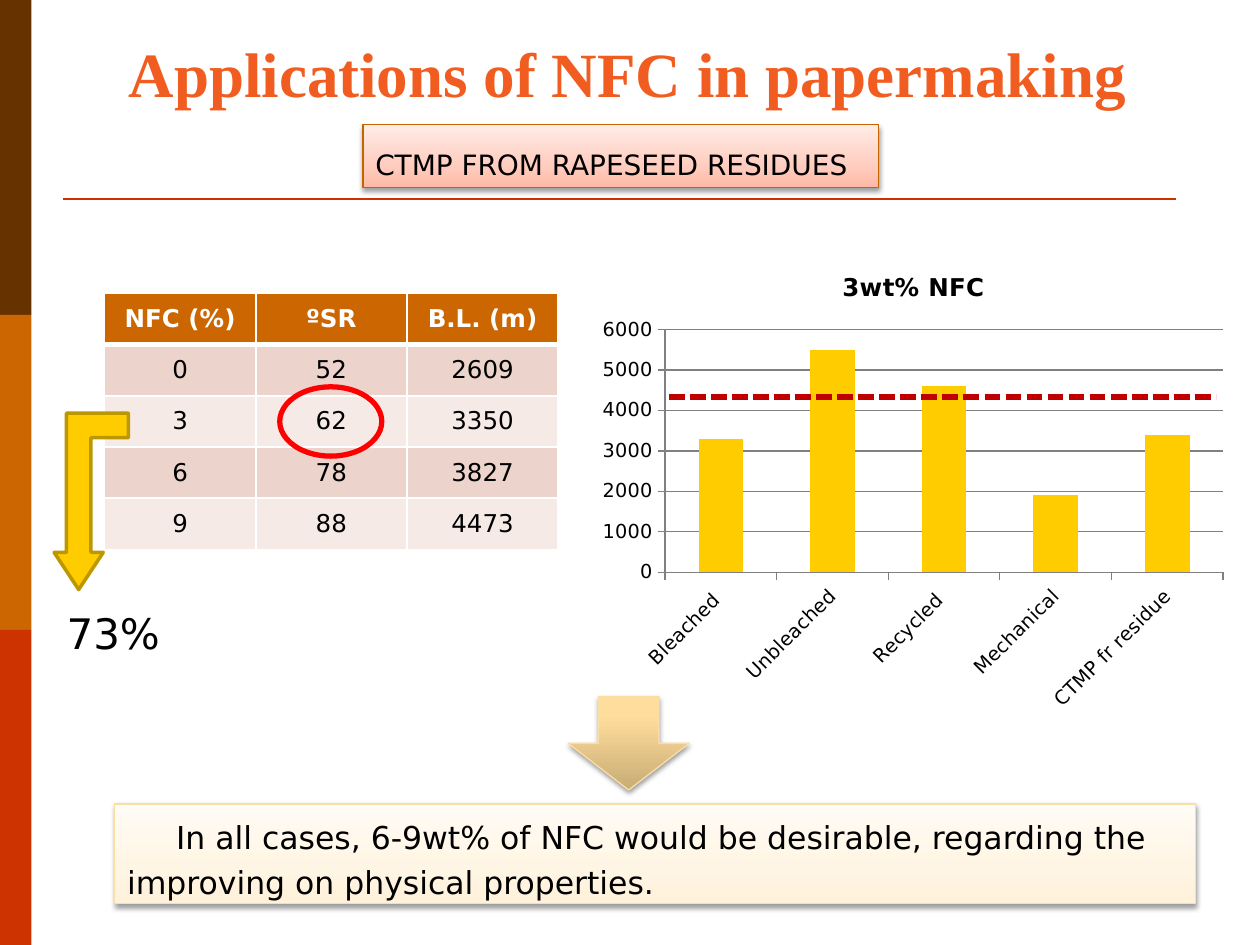
from lxml import etree
from pptx import Presentation
from pptx.chart.data import CategoryChartData
from pptx.dml.color import RGBColor
from pptx.enum.chart import XL_CHART_TYPE, XL_TICK_MARK
from pptx.enum.dml import MSO_LINE
from pptx.enum.shapes import MSO_CONNECTOR, MSO_SHAPE
from pptx.enum.text import MSO_ANCHOR, PP_ALIGN
from pptx.oxml import parse_xml
from pptx.oxml.ns import nsdecls, qn
from pptx.util import Inches, Pt

RECT, ELLIPSE = MSO_SHAPE.RECTANGLE, MSO_SHAPE.OVAL
DOWN_ARROW, BENT_ARROW = MSO_SHAPE.DOWN_ARROW, MSO_SHAPE.BENT_UP_ARROW
LEFT, CENTER = PP_ALIGN.LEFT, PP_ALIGN.CENTER
TOP, MIDDLE, BOTTOM = MSO_ANCHOR.TOP, MSO_ANCHOR.MIDDLE, MSO_ANCHOR.BOTTOM
SANS, SERIF = "DejaVu Sans", "Times New Roman"

BLACK = RGBColor(0x00, 0x00, 0x00)
WHITE = RGBColor(0xFF, 0xFF, 0xFF)
BROWN = RGBColor(0x66, 0x33, 0x00)
OCHRE = RGBColor(0xCC, 0x66, 0x00)
RUST = RGBColor(0xCC, 0x33, 0x00)
ORANGE = RGBColor(0xF1, 0x5D, 0x20)
YELLOW = RGBColor(0xFF, 0xCC, 0x00)
DARK_YELLOW = RGBColor(0xBD, 0x97, 0x00)
SAND = RGBColor(0xFB, 0xDE, 0xA4)
AMBER = RGBColor(0xC8, 0x64, 0x00)
RED = RGBColor(0xFF, 0x00, 0x00)
DARK_RED = RGBColor(0xC0, 0x00, 0x00)
GRAY = RGBColor(0x80, 0x80, 0x80)
BANDS = (RGBColor(0xEC, 0xD3, 0xCC), RGBColor(0xF6, 0xEA, 0xE7))

PINK_FADE = ((0, "FFB9A5"), (35, "FFCDBF"), (100, "FFECE7"))
CREAM_FADE = ((0, "FFF1DA"), (35, "FFF5E4"), (100, "FFFBF5"))
SAND_FADE = ((0, "C8AC75"), (80, "FFDD9D"), (100, "FFDE9F"))

TITLE = "Applications of NFC in papermaking"
SUBTITLE = "CTMP FROM RAPESEED RESIDUES"
INCREASE = "73%"
CONCLUSION = ("In all cases, 6-9wt% of NFC would be desirable, regarding the "
              "improving on physical properties.")
TABLE_ROWS = [
    ("NFC (%)", "ºSR", "B.L. (m)"),
    ("0", "52", "2609"),
    ("3", "62", "3350"),
    ("6", "78", "3827"),
    ("9", "88", "4473"),
]
CHART_TITLE = "3wt% NFC"
BREAKING_LENGTHS = {"Bleached ": 3300, "Unbleached": 5500, "Recycled ": 4600,
                    "Mechanical": 1900, "CTMP fr residue": 3400}


def style_font(font, size, color=BLACK, name=SANS, bold=False):
    font.size, font.name, font.bold = Pt(size), name, bold
    font.color.rgb = color


def write(frame, text, size, color=BLACK, name=SANS, bold=False, align=LEFT, anchor=TOP):
    frame.word_wrap = True
    frame.vertical_anchor = anchor
    frame.text = text
    para = frame.paragraphs[0]
    para.alignment = align
    style_font(para.runs[0].font, size, color, name, bold)
    return para


def add_text(page, box, text, size, **style):
    write(page.shapes.add_textbox(*map(Inches, box)).text_frame, text, size, **style)


def add_shape(page, kind, box, fill=None, line=None, width=0.75):
    shape = page.shapes.add_shape(kind, *map(Inches, box))
    shape.shadow.inherit = False
    if fill is None:
        shape.fill.background()
    else:
        shape.fill.solid()
        shape.fill.fore_color.rgb = fill
    if line is None:
        shape.line.fill.background()
    else:
        shape.line.color.rgb = line
        shape.line.width = Pt(width)
    return shape


def add_faded(page, kind, box, fade, line):
    shape = add_shape(page, kind, box, WHITE, line)
    properties = shape.element.spPr
    stops = "".join(f'<a:gs pos="{place * 1000}"><a:srgbClr val="{color}"/></a:gs>'
                    for place, color in fade)
    properties.replace(properties.find(qn("a:solidFill")), parse_xml(
        f'<a:gradFill {nsdecls("a")} rotWithShape="1"><a:gsLst>{stops}</a:gsLst>'
        '<a:lin ang="16200000" scaled="0"/></a:gradFill>'))
    properties.find(qn("a:effectLst")).append(parse_xml(
        f'<a:outerShdw {nsdecls("a")} blurRad="{Pt(3.1)}" dist="{Pt(1.6)}" dir="5400000" '
        'rotWithShape="0"><a:srgbClr val="000000"><a:alpha val="38000"/></a:srgbClr>'
        '</a:outerShdw>'))
    return shape


def add_line(page, start, end, color, width):
    line = page.shapes.add_connector(MSO_CONNECTOR.STRAIGHT, *map(Inches, start + end))
    line.line.color.rgb = color
    line.line.width = Pt(width)
    etree.SubElement(line.element.spPr, qn("a:effectLst"))
    return line


def add_borders(cell, header):
    properties = cell._tc.get_or_add_tcPr()
    for index, side in enumerate(("lnL", "lnR", "lnT", "lnB")):
        width = 3 if header and side == "lnB" else 1
        properties.insert(index, parse_xml(
            f'<a:{side} {nsdecls("a")} w="{Pt(width)}"><a:solidFill>'
            f'<a:srgbClr val="{WHITE}"/></a:solidFill></a:{side}>'))


def add_results_table(page):
    box = map(Inches, (0.83, 2.33, 3.6, 2.03))
    table = page.shapes.add_table(len(TABLE_ROWS), len(TABLE_ROWS[0]), *box).table
    for row, values in enumerate(TABLE_ROWS):
        header = row == 0
        for column, value in enumerate(values):
            cell = table.cell(row, column)
            write(cell.text_frame, value, 14, WHITE if header else BLACK,
                  bold=header, align=CENTER)
            cell.vertical_anchor = MIDDLE
            cell.fill.solid()
            cell.fill.fore_color.rgb = OCHRE if header else BANDS[(row - 1) % 2]
            add_borders(cell, header)


def add_strength_chart(page):
    data = CategoryChartData()
    data.categories = list(BREAKING_LENGTHS)
    data.add_series("Series 1", list(BREAKING_LENGTHS.values()))
    box = map(Inches, (4.69, 1.98, 5.12, 3.74))
    chart = page.shapes.add_chart(XL_CHART_TYPE.COLUMN_CLUSTERED, *box, data).chart
    style_font(chart.font, 18)
    chart.has_legend = False
    chart.has_title = True
    chart.chart_title.include_in_layout = False
    chart.chart_title.text_frame.text = CHART_TITLE
    style_font(chart.chart_title.text_frame.paragraphs[0].runs[0].font, 14, bold=True)
    plot = chart.plots[0]
    plot.gap_width = 150
    plot.vary_by_categories = False
    bars = plot.series[0].format.fill
    bars.solid()
    bars.fore_color.rgb = YELLOW
    for axis in (chart.category_axis, chart.value_axis):
        style_font(axis.tick_labels.font, 11)
        axis.major_tick_mark = XL_TICK_MARK.OUTSIDE
        axis.format.line.color.rgb = GRAY
    chart.category_axis._element.find(qn("c:txPr")).find(qn("a:bodyPr")).set("rot", "-2700000")
    values = chart.value_axis
    values.minimum_scale, values.maximum_scale, values.major_unit = 0, 6000, 1000
    values.has_major_gridlines = True
    values.major_gridlines.format.line.color.rgb = GRAY
    area = chart._chartSpace.chart.plotArea
    for old in area.findall(qn("c:layout")):
        area.remove(old)
    area.insert(0, parse_xml(
        f'<c:layout {nsdecls("c")}><c:manualLayout><c:layoutTarget val="inner"/>'
        '<c:xMode val="edge"/><c:yMode val="edge"/><c:x val="0.115"/><c:y val="0.17"/>'
        '<c:w val="0.865"/><c:h val="0.515"/></c:manualLayout></c:layout>'))


def main():
    deck = Presentation()
    deck.slide_width, deck.slide_height = Inches(10), Inches(7.5)
    page = deck.slides.add_slide(deck.slide_layouts[6])

    for index, color in enumerate((BROWN, OCHRE, RUST)):
        add_shape(page, RECT, (0, index * 2.5, 0.25, 2.5), color)
    add_line(page, (0.5, 1.58), (9.33, 1.58), RUST, 1.5)

    subtitle = add_faded(page, RECT, (2.88, 0.99, 4.09, 0.5), PINK_FADE, AMBER)
    write(subtitle.text_frame, SUBTITLE, 16, anchor=MIDDLE).line_spacing = 1.5
    add_text(page, (0.47, 0.13, 9.02, 0.79), TITLE, 36, color=ORANGE, name=SERIF,
             bold=True, align=CENTER, anchor=BOTTOM)

    add_results_table(page)
    add_text(page, (0.43, 4.77, 1.18, 0.5), INCREASE, 24)
    add_shape(page, ELLIPSE, (2.22, 3.07, 0.81, 0.55), line=RED, width=3)

    conclusion = add_faded(page, RECT, (0.91, 6.38, 8.58, 0.79), CREAM_FADE, SAND)
    para = write(conclusion.text_frame, CONCLUSION, 18)
    para.line_spacing = Pt(26)
    para._p.get_or_add_pPr().set("indent", str(Inches(0.39)))
    add_faded(page, DOWN_ARROW, (4.51, 5.53, 0.96, 0.74), SAND_FADE, SAND)

    add_strength_chart(page)
    bent_arrow = add_shape(page, BENT_ARROW, (0.43, 3.28, 0.59, 1.4), YELLOW, DARK_YELLOW, 2)
    for index, value in enumerate((0.33, 0.33, 0.5)):
        bent_arrow.adjustments[index] = value
    for flip in ("flipH", "flipV"):
        bent_arrow.element.spPr.xfrm.set(flip, "1")
    threshold = add_line(page, (5.31, 3.15), (9.65, 3.15), DARK_RED, 3)
    threshold.line.dash_style = MSO_LINE.SQUARE_DOT

    deck.save("out.pptx")


if __name__ == "__main__":
    main()
